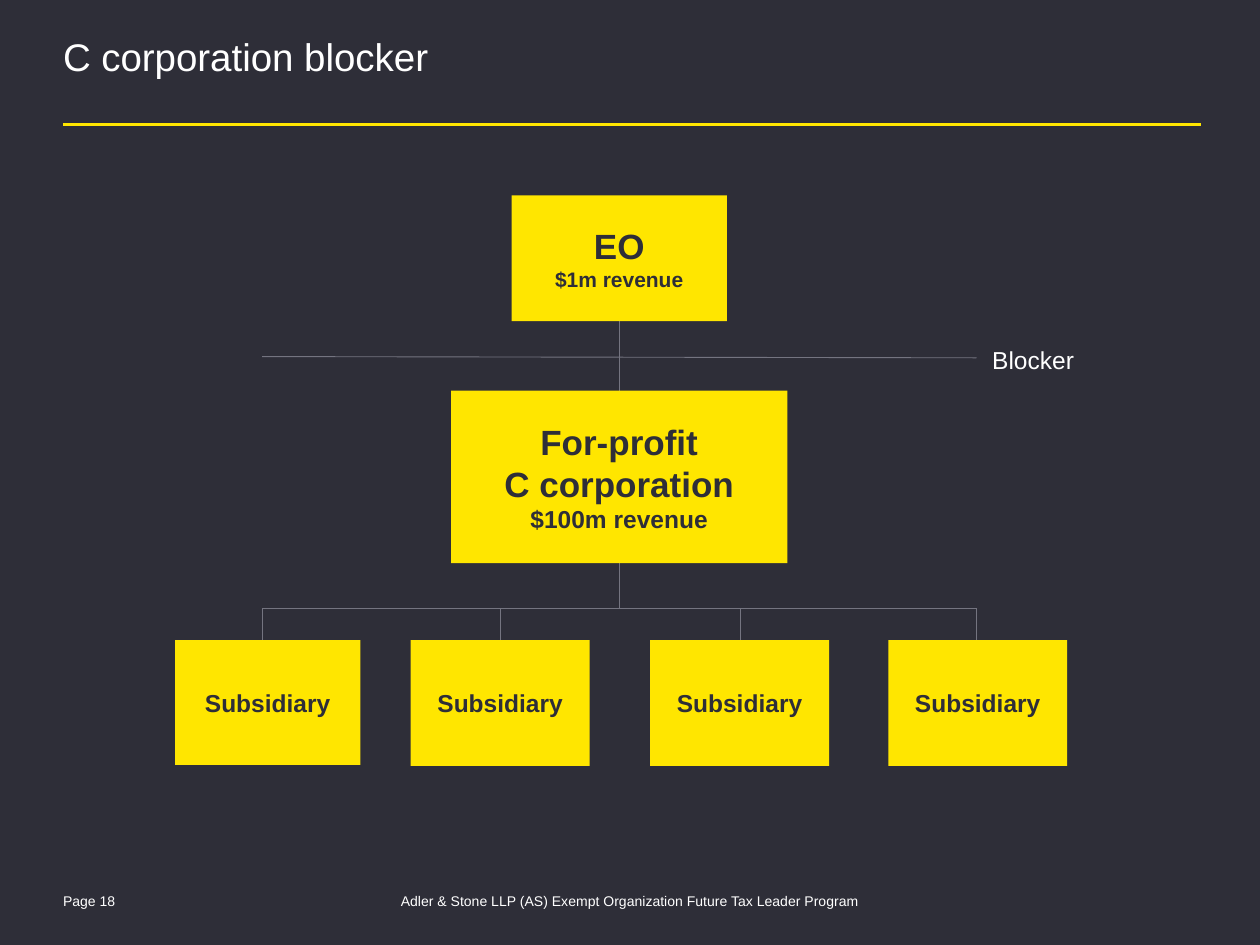
from pptx import Presentation
from pptx.dml.color import RGBColor
from pptx.enum.shapes import MSO_CONNECTOR, MSO_SHAPE
from pptx.enum.text import MSO_ANCHOR, PP_ALIGN
from pptx.oxml.ns import qn
from pptx.util import Inches, Pt
from lxml import etree

DARK = RGBColor(0x2E, 0x2E, 0x38)
YELLOW = RGBColor(0xFF, 0xE6, 0x00)
GRAY = RGBColor(0x74, 0x74, 0x80)
WHITE = RGBColor(0xFF, 0xFF, 0xFF)
LEFT, CENTER = PP_ALIGN.LEFT, PP_ALIGN.CENTER
TOP, MIDDLE = MSO_ANCHOR.TOP, MSO_ANCHOR.MIDDLE
STRAIGHT, RECT = MSO_CONNECTOR.STRAIGHT, MSO_SHAPE.RECTANGLE

deck = Presentation()
deck.slide_width, deck.slide_height = Inches(10), Inches(7.5)
slide = deck.slides.add_slide(deck.slide_layouts[5])
slide.background.fill.solid()
slide.background.fill.fore_color.rgb = DARK
shapes = slide.shapes


def write(frame, rows, color, align=CENTER, bold=False):
    """Fill a text frame with (text, size) rows."""
    frame.word_wrap = True
    for i, (text, size) in enumerate(rows):
        para = frame.paragraphs[0] if i == 0 else frame.add_paragraph()
        para.text = text
        para.alignment = align
        para.font.name, para.font.size = "Arial", Pt(size)
        para.font.bold, para.font.color.rgb = bold, color


def draw_line(x1, y1, x2, y2, color=GRAY, width=0.5):
    line = shapes.add_connector(
        STRAIGHT, Inches(x1), Inches(y1), Inches(x2), Inches(y2))
    line.line.color.rgb, line.line.width = color, Pt(width)
    etree.SubElement(line._element.spPr, qn("a:effectLst"))


# Title and rule
title = shapes.title
title.left, title.top = Inches(0.5), Inches(0.32)
title.width, title.height = Inches(9), Inches(0.65)
frame = title.text_frame
frame.margin_left = frame.margin_right = frame.margin_top = frame.margin_bottom = 0
frame.vertical_anchor = TOP
write(frame, [("C corporation blocker", 22)], WHITE, LEFT)
frame.paragraphs[0].line_spacing = 0.85
draw_line(0.5, 0.99, 9.53, 0.99, YELLOW, 1.5)

# Links between the levels
mid, bus = 4.92, 4.83
drops = [2.08, 3.97, 5.88, 7.75]
draw_line(mid, 2.41, mid, 3.34)
draw_line(mid, 3.99, mid, bus)
draw_line(drops[0], bus, drops[-1], bus)
for x in drops:
    draw_line(x, bus, x, 5.09)

# Blocker line and label
draw_line(drops[0], 2.83, drops[-1], 2.84)
label = shapes.add_textbox(Inches(7.67), Inches(2.69), Inches(1.06), Inches(0.33))
write(label.text_frame, [("Blocker", 14)], WHITE)

# Entities
unit = [("Subsidiary", 14)]
boxes = [
    (4.06, 1.55, 1.71, 1, [("EO", 20), ("$1m revenue", 12)]),
    (3.58, 3.1, 2.67, 1.37,
     [("For-profit\vC corporation", 20), ("$100m revenue", 14)]),
    (1.39, 5.08, 1.47, 0.99, unit),
    (3.26, 5.08, 1.42, 1, unit),
    (5.16, 5.08, 1.42, 1, unit),
    (7.05, 5.08, 1.42, 1, unit),
]
for x, y, w, h, rows in boxes:
    box = shapes.add_shape(RECT, Inches(x), Inches(y), Inches(w), Inches(h))
    box.shadow.inherit = False
    box.fill.solid()
    box.fill.fore_color.rgb = YELLOW
    box.line.fill.background()
    box.text_frame.vertical_anchor = MIDDLE
    write(box.text_frame, rows, DARK, bold=True)

# Footer
for x, w, text, align in [
    (0.5, 1.31, "Page 18", LEFT),
    (2.79, 4.42,
     "Adler & Stone LLP (AS) Exempt Organization Future Tax Leader Program", CENTER),
]:
    foot = shapes.add_textbox(Inches(x), Inches(7.06), Inches(w), Inches(0.15))
    frame = foot.text_frame
    frame.margin_left = frame.margin_right = frame.margin_bottom = 0
    frame.margin_top = Inches(0.04)
    write(frame, [(text, 8)], WHITE, align)
    frame.paragraphs[0].line_spacing = 0.85

deck.save("out.pptx")
